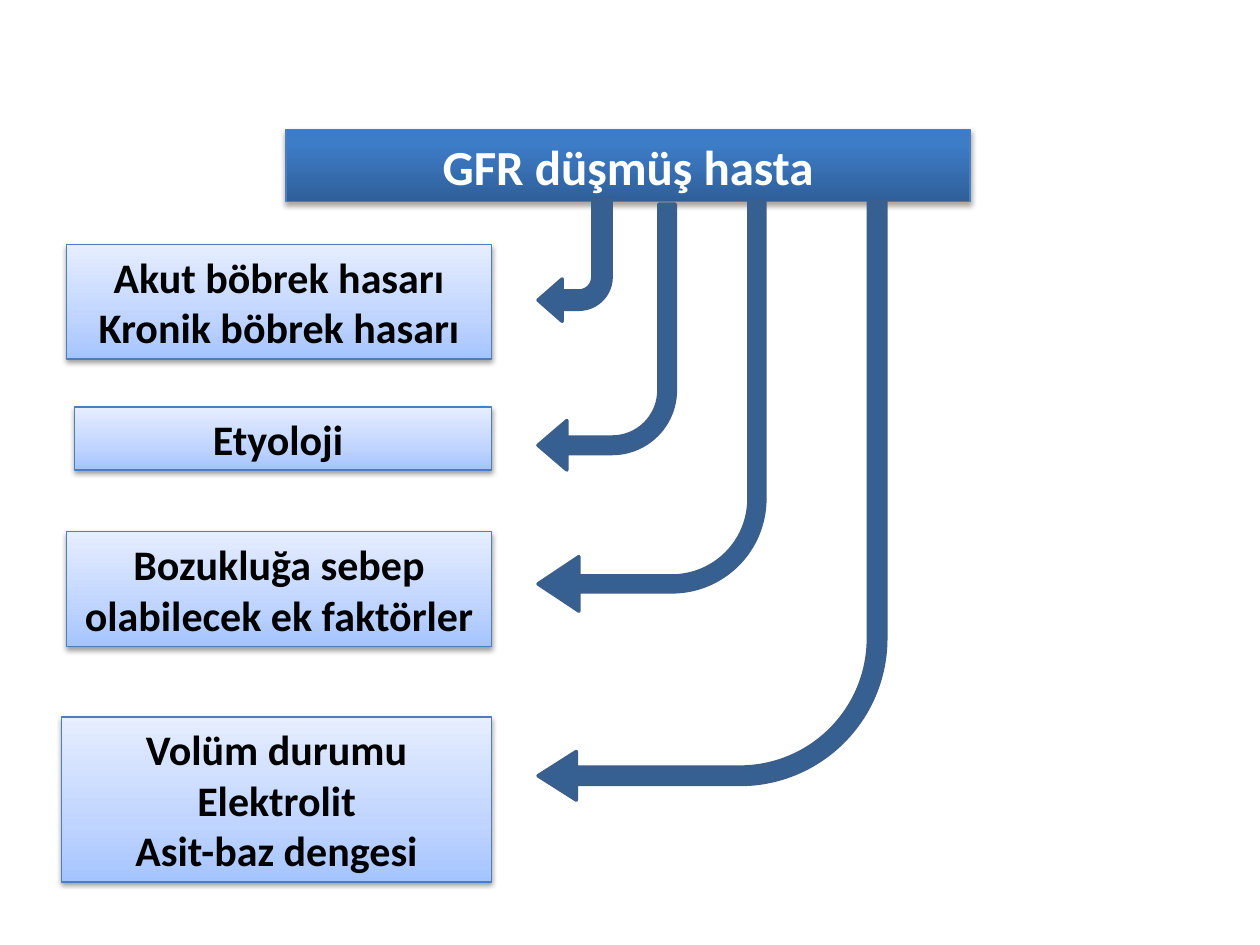
from copy import deepcopy
from dataclasses import dataclass

from lxml import etree
from pptx import Presentation
from pptx.dml.color import RGBColor
from pptx.enum.shapes import MSO_SHAPE
from pptx.enum.text import MSO_ANCHOR, MSO_AUTO_SIZE, PP_ALIGN
from pptx.oxml.ns import qn
from pptx.util import Inches, Pt

RECTANGLE = MSO_SHAPE.RECTANGLE
BENT_ARROW = MSO_SHAPE.BENT_ARROW
CENTER = PP_ALIGN.CENTER
MIDDLE = MSO_ANCHOR.MIDDLE
GROW = MSO_AUTO_SIZE.SHAPE_TO_FIT_TEXT

# The slide is a grid of 100 columns by 75 rows
COLUMNS, ROWS = 100, 75
BOX_RIGHT = 39
ARROW_TIP = 42.7


@dataclass(frozen=True)
class BoxStyle:
    gradient: tuple[tuple[int, str], ...]
    text_color: str
    text_size: int
    shadow_alpha: int
    shadow_distance: float


@dataclass(frozen=True)
class Theme:
    font: str = "Calibri"
    box_line: str = "4B7EBC"
    arrow_fill: str = "376092"
    arrow_line: str = "3A5F8C"
    shadow: str = "000000"
    shadow_blur: float = 3.1
    title: BoxStyle = BoxStyle(
        ((0, "2F5F99"), (80, "3D7CC7"), (100, "3A7CCB")), "FFFFFF", 28, 35, 1.8)
    step: BoxStyle = BoxStyle(
        ((0, "A4C4FF"), (35, "BFD4FF"), (100, "E6EEFF")), "000000", 24, 38, 1.6)


@dataclass(frozen=True)
class Step:
    """A box on the left and the arrow that leads to it from the title."""
    text: str
    left: float
    top: float
    height: float
    arrow_top: float
    arrow_width: float
    arrow_height: float
    arrow_shape: tuple[float, ...]


THEME = Theme()
STEPS = (
    Step("Akut böbrek hasarı\nKronik böbrek hasarı", 5.3, 19.4, 9.1,
         15.8, 5.8, 9.7, (0.25, 0.29, 0.33, 0.44)),
    Step("Etyoloji ", 5.9, 32.3, 5,
         16.2, 10.9, 21.1, (0.12, 0.18, 0.21, 0.46)),
    Step("Bozukluğa sebep olabilecek ek faktörler", 5.3, 42.2, 9.1,
         16, 18, 32.5, (0.07, 0.12, 0.18, 0.41)),
    Step("Volüm durumu\nElektrolit\nAsit-baz dengesi", 4.9, 56.9, 13.1,
         16, 27.6, 47.5, (0.05, 0.07, 0.11, 0.42)),
)


def add_outlined(page, kind, left: float, top: float, width: float,
                 height: float, line_color: str, line_width: float):
    """Place a preset shape by grid columns and rows, without shadow."""
    column, row = Inches(10) / COLUMNS, Inches(7.5) / ROWS
    shape = page.shapes.add_shape(
        kind, round(left * column), round(top * row),
        round(width * column), round(height * row))
    shape.shadow.inherit = False
    shape.line.color.rgb = RGBColor.from_string(line_color)
    shape.line.width = Pt(line_width)
    return shape


def fill_gradient(shape, stops: tuple[tuple[int, str], ...]) -> None:
    """Run the colour stops from the bottom edge to the top edge."""
    shape.fill.gradient()
    shape.fill.gradient_angle = 90
    stop_list = shape.element.find(".//" + qn("a:gsLst"))
    while len(stop_list) < len(stops):
        stop_list.append(deepcopy(stop_list[0]))
    for stop, (percent, color) in zip(shape.fill.gradient_stops, stops):
        stop.position = percent / 100
        stop.color.rgb = RGBColor.from_string(color)


def add_shadow(shape, style: BoxStyle) -> None:
    effects = shape.element.spPr.find(qn("a:effectLst"))
    shadow = etree.SubElement(
        effects, qn("a:outerShdw"), blurRad=str(Pt(THEME.shadow_blur)),
        dist=str(Pt(style.shadow_distance)), dir="5400000", rotWithShape="0")
    color = etree.SubElement(shadow, qn("a:srgbClr"), val=THEME.shadow)
    etree.SubElement(color, qn("a:alpha"), val=str(style.shadow_alpha * 1000))


def add_box(page, text: str, left: float, top: float, width: float,
            height: float, style: BoxStyle) -> None:
    box = add_outlined(page, RECTANGLE, left, top, width, height,
                       THEME.box_line, 0.75)
    fill_gradient(box, style.gradient)
    add_shadow(box, style)
    frame = box.text_frame
    frame.text = text
    frame.word_wrap = True
    frame.auto_size = GROW
    frame.vertical_anchor = MIDDLE
    for para in frame.paragraphs:
        para.alignment = CENTER
        for span in para.runs:
            span.font.name = THEME.font
            span.font.size = Pt(style.text_size)
            span.font.bold = True
            span.font.color.rgb = RGBColor.from_string(style.text_color)


def add_arrow(page, step: Step) -> None:
    arrow = add_outlined(page, BENT_ARROW, ARROW_TIP, step.arrow_top,
                         step.arrow_width, step.arrow_height,
                         THEME.arrow_line, 2)
    arrow.rotation = 180
    arrow.fill.solid()
    arrow.fill.fore_color.rgb = RGBColor.from_string(THEME.arrow_fill)
    for index, value in enumerate(step.arrow_shape):
        arrow.adjustments[index] = value


def main() -> None:
    deck = Presentation()
    deck.slide_width, deck.slide_height = Inches(10), Inches(7.5)
    page = deck.slides.add_slide(deck.slide_layouts[6])

    # Title bar
    add_box(page, "GFR düşmüş hasta", 22.7, 10.3, 54.3, 5.7, THEME.title)

    # Steps, each with its arrow
    for step in STEPS:
        add_arrow(page, step)
        add_box(page, step.text, step.left, step.top, BOX_RIGHT - step.left,
                step.height, THEME.step)

    deck.save("out.pptx")


if __name__ == "__main__":
    main()
